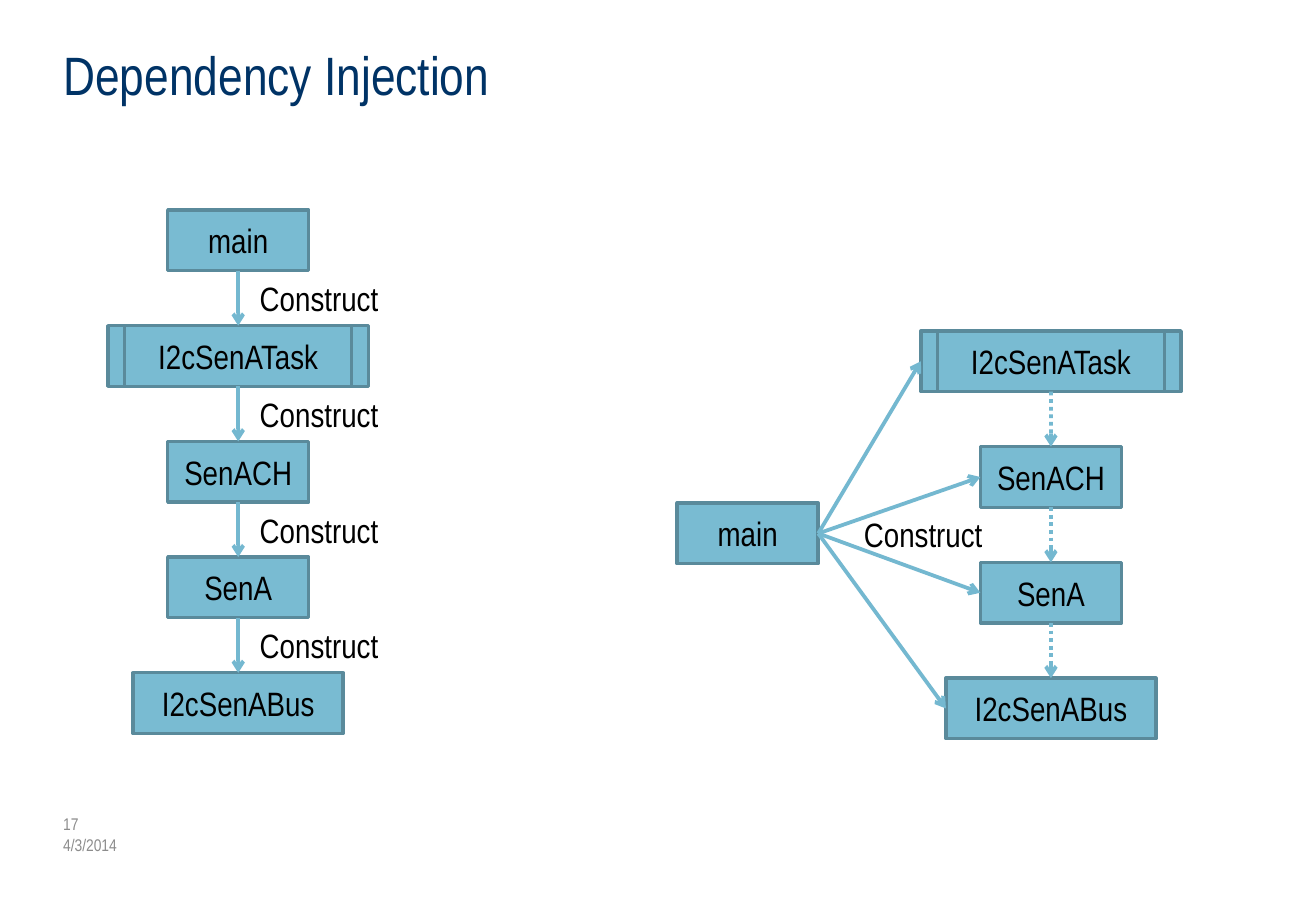
import itertools

import pptx
import pptx.dml.color
import pptx.enum.dml
import pptx.enum.shapes
import pptx.enum.text
import pptx.oxml
import pptx.oxml.ns
import pptx.util

Cm = pptx.util.Cm
Pt = pptx.util.Pt
ANCHOR = pptx.enum.text.MSO_ANCHOR
ALIGN = pptx.enum.text.PP_ALIGN
RECT = pptx.enum.shapes.MSO_SHAPE.RECTANGLE
STRAIGHT = pptx.enum.shapes.MSO_CONNECTOR.STRAIGHT
DOTS = pptx.enum.dml.MSO_LINE.ROUND_DOT

FONT = "Arial Narrow"
BLACK, NAVY, GREY = "000000", "003366", "8C8C8C"
FILL, EDGE, ARROW = "79BBD2", "5A8A9B", "74B8D0"

HIGH = 1.27
STEP = 2.42
SLIM, WIDE = 2.95, 4.39
OUTER, INNER = 5.44, 4.75
LEFT, LEFT_TOP = 4.98, 4.39
RIGHT, RIGHT_TOP = 21.97, 6.92
MAIN, MAIN_TOP = 15.63, 10.52
CHAIN = [("SenACH", SLIM), ("SenA", SLIM), ("I2cSenABus", WIDE)]

# Connection sites of a rectangle
TOP_SITE, LEFT_SITE, BOTTOM_SITE, RIGHT_SITE = range(4)


def color(code):
    return pptx.dml.color.RGBColor.from_string(code)


def style(frame, size, code, align=ALIGN.LEFT):
    for para in frame.paragraphs:
        para.alignment = align
        for run in para.runs:
            run.font.name = FONT
            run.font.size = Pt(size)
            run.font.color.rgb = color(code)


def add_title(slide, text):
    title = slide.shapes.title
    title.left, title.top = Cm(1.07), Cm(0.74)
    title.width, title.height = Cm(25.4), Cm(3.18)
    title.text_frame.text = text
    title.text_frame.vertical_anchor = ANCHOR.TOP
    style(title.text_frame, 32, NAVY)


def add_foot(slide, text):
    box = slide.shapes.add_textbox(Cm(1.07), Cm(16.81), Cm(5.51), Cm(1.27))
    frame = box.text_frame
    frame.word_wrap = True
    frame.vertical_anchor = ANCHOR.MIDDLE
    frame.text = text
    style(frame, 10, GREY)


def add_box(slide, mid, top, width, text=""):
    """Add a box centred on the horizontal position mid."""
    box = slide.shapes.add_shape(
        RECT, Cm(mid - width / 2), Cm(top), Cm(width), Cm(HIGH))
    box.shadow.inherit = False
    box.fill.solid()
    box.fill.fore_color.rgb = color(FILL)
    box.line.color.rgb = color(EDGE)
    box.line.width = Pt(2)
    frame = box.text_frame
    frame.text = text
    frame.word_wrap = False
    frame.vertical_anchor = ANCHOR.MIDDLE
    style(frame, 20, BLACK, ALIGN.CENTER)
    return box


def add_task(slide, mid, top):
    """Add the task as a box within a wider box, and return the wider one."""
    outer = add_box(slide, mid, top, OUTER)
    add_box(slide, mid, top, INNER, "I2cSenATask")
    return outer


def add_chain(slide, mid, top):
    """Add the task and the three classes below it."""
    boxes = [add_task(slide, mid, top)]
    for row, (name, width) in enumerate(CHAIN, 1):
        boxes.append(add_box(slide, mid, top + row * STEP, width, name))
    return boxes


def add_arrow(slide, start, out, end, into, dash=None):
    line = slide.shapes.add_connector(STRAIGHT, 0, 0, 0, 0)
    line.begin_connect(start, out)
    line.end_connect(end, into)
    line.line.color.rgb = color(ARROW)
    line.line.width = Pt(2.25)
    if dash:
        line.line.dash_style = dash
    props = line.line._get_or_add_ln()
    tail = pptx.oxml.parse_xml(
        f'<a:tailEnd {pptx.oxml.ns.nsdecls("a")} type="arrow"/>')
    props.append(tail)
    effect = pptx.oxml.parse_xml(
        f'<a:effectLst {pptx.oxml.ns.nsdecls("a")}/>')
    props.addnext(effect)


def link(slide, boxes, dash=None):
    """Join each box to the one below it."""
    for above, below in itertools.pairwise(boxes):
        add_arrow(slide, above, BOTTOM_SITE, below, TOP_SITE, dash)


def add_label(slide, left, top):
    box = slide.shapes.add_textbox(Cm(left), Cm(top), Cm(3.02), Cm(1.11))
    box.text_frame.word_wrap = False
    box.text_frame.text = "Construct"
    style(box.text_frame, 20, BLACK)


def draw_nested(slide):
    """Draw the chain in which each part constructs the next."""
    first = add_box(slide, LEFT, LEFT_TOP, SLIM, "main")
    boxes = [first] + add_chain(slide, LEFT, LEFT_TOP + STEP)
    link(slide, boxes)
    for row in range(len(boxes) - 1):
        add_label(slide, LEFT + 0.2, LEFT_TOP + HIGH + 0.03 + row * STEP)


def draw_injected(slide):
    """Draw the chain in which main constructs every part."""
    boxes = add_chain(slide, RIGHT, RIGHT_TOP)
    first = add_box(slide, MAIN, MAIN_TOP, SLIM, "main")
    add_label(slide, 17.81, 10.62)
    for box in boxes:
        add_arrow(slide, first, RIGHT_SITE, box, LEFT_SITE)
    link(slide, boxes, DOTS)


def main():
    deck = pptx.Presentation()
    deck.slide_width, deck.slide_height = Cm(27.51), Cm(19.05)
    slide = deck.slides.add_slide(deck.slide_layouts.get_by_name("Title Only"))
    add_title(slide, "Dependency Injection")
    add_foot(slide, "17\n4/3/2014")
    draw_nested(slide)
    draw_injected(slide)
    deck.save("out.pptx")


if __name__ == "__main__":
    main()
